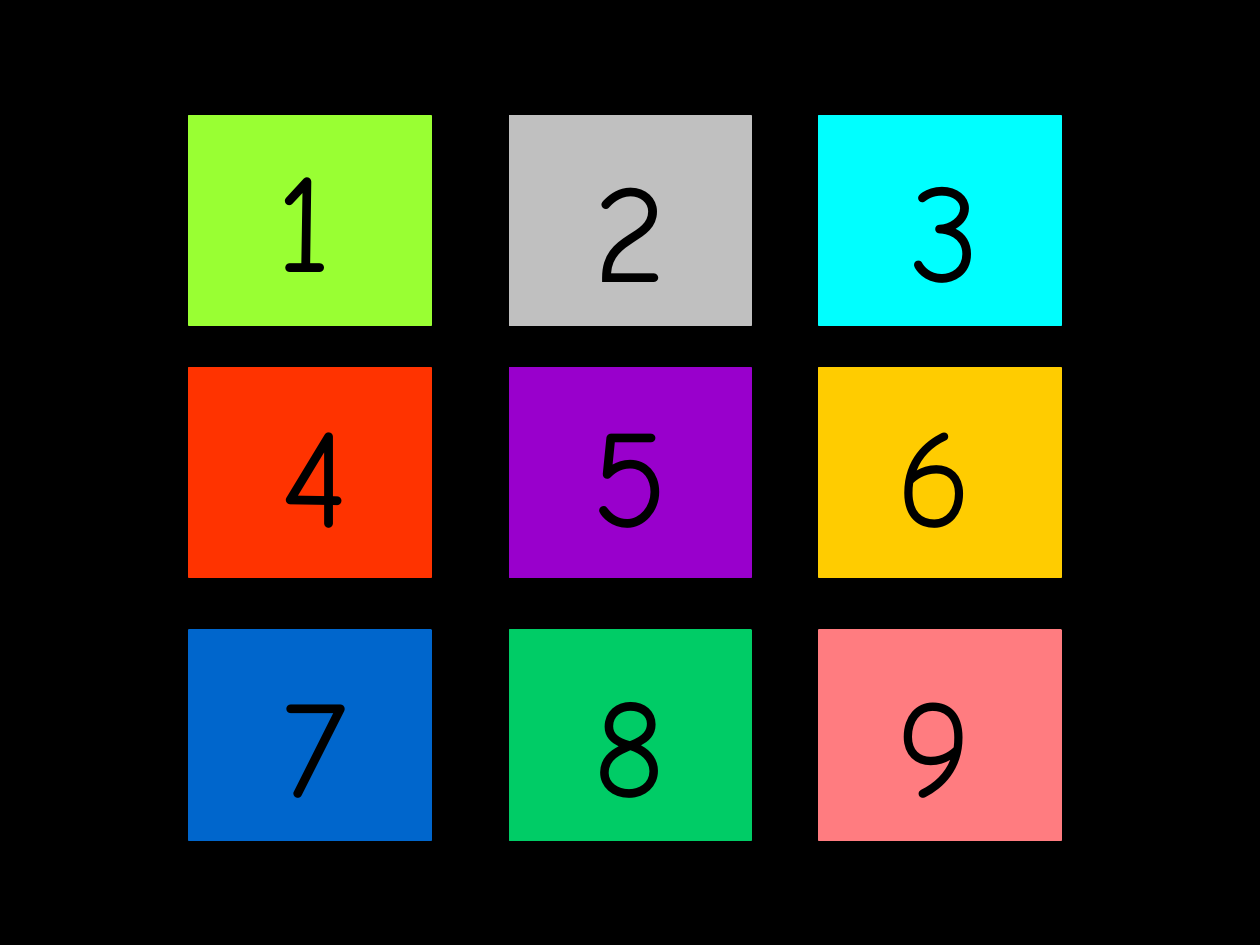
from dataclasses import dataclass
from pptx import Presentation
from pptx.dml.color import RGBColor as RGB
from pptx.enum.shapes import MSO_SHAPE as Shape
from pptx.enum.text import MSO_AUTO_SIZE as Fit, PP_ALIGN as Align
from pptx.oxml.ns import qn
from pptx.util import Pt
from lxml.etree import SubElement as Sub


@dataclass
class Theme:
    back: str = "000000"
    ink: str = "000000"
    font: str = "Comic Neue"
    size: int = 80
    edge: float = 0.75
    tiles: tuple = (
        ("99FF33", "C0C0C0", "00FFFF"),
        ("FF3300", "9900CC", "FFCC00"),
        ("0066CC", "00CC66", "FF7C80"),
    )


class Board:
    """Holds the theme and the slide being drawn on."""

    def __init__(self, slide, theme):
        self.slide, self.theme = slide, theme
        fill = slide.background.fill
        fill.solid()
        fill.fore_color.rgb = RGB.from_string(theme.back)

    def tile(self, x, y, w, h, color):
        box = self.slide.shapes.add_shape(Shape.RECTANGLE, Pt(x), Pt(y), Pt(w), Pt(h))
        box.shadow.inherit = False
        rgb = RGB.from_string(color)
        box.fill.solid()
        box.fill.fore_color.rgb = rgb
        box.line.color.rgb = rgb
        box.line.width = Pt(self.theme.edge)

    def digit(self, x, y, w, h, text):
        frame = self.slide.shapes.add_textbox(Pt(x), Pt(y), Pt(w), Pt(h)).text_frame
        frame.word_wrap = True
        frame.auto_size = Fit.SHAPE_TO_FIT_TEXT
        para = frame.paragraphs[0]
        para.alignment = Align.CENTER
        # Space before as a share of the type size
        gap = Sub(para._p.get_or_add_pPr(), qn("a:spcBef"))
        Sub(gap, qn("a:spcPct")).set("val", "50000")
        run = para.add_run()
        run.text = text
        font = run.font
        font.name, font.size = self.theme.font, Pt(self.theme.size)
        font.color.rgb = RGB.from_string(self.theme.ink)


def main():
    deck = Presentation()
    deck.slide_width, deck.slide_height = Pt(720), Pt(540)
    theme = Theme()
    board = Board(deck.slides.add_slide(deck.slide_layouts[6]), theme)

    cols, rows = (108, 291, 468), (66, 210, 360)
    marks = (144, 324, 498), (78, 218, 372)
    nudge = {1: (-6, -6), 3: (6, 0)}
    cells = [(r, c) for r in range(3) for c in range(3)]

    for r, c in cells:
        board.tile(cols[c], rows[r], 138.25, 120.25, theme.tiles[r][c])
    for num, (r, c) in enumerate(cells, 1):
        dx, dy = nudge.get(num, (0, 0))
        board.digit(marks[0][c] + dx, marks[1][r] + dy, 72, 103, str(num))

    deck.save("out.pptx")


if __name__ == "__main__":
    main()
